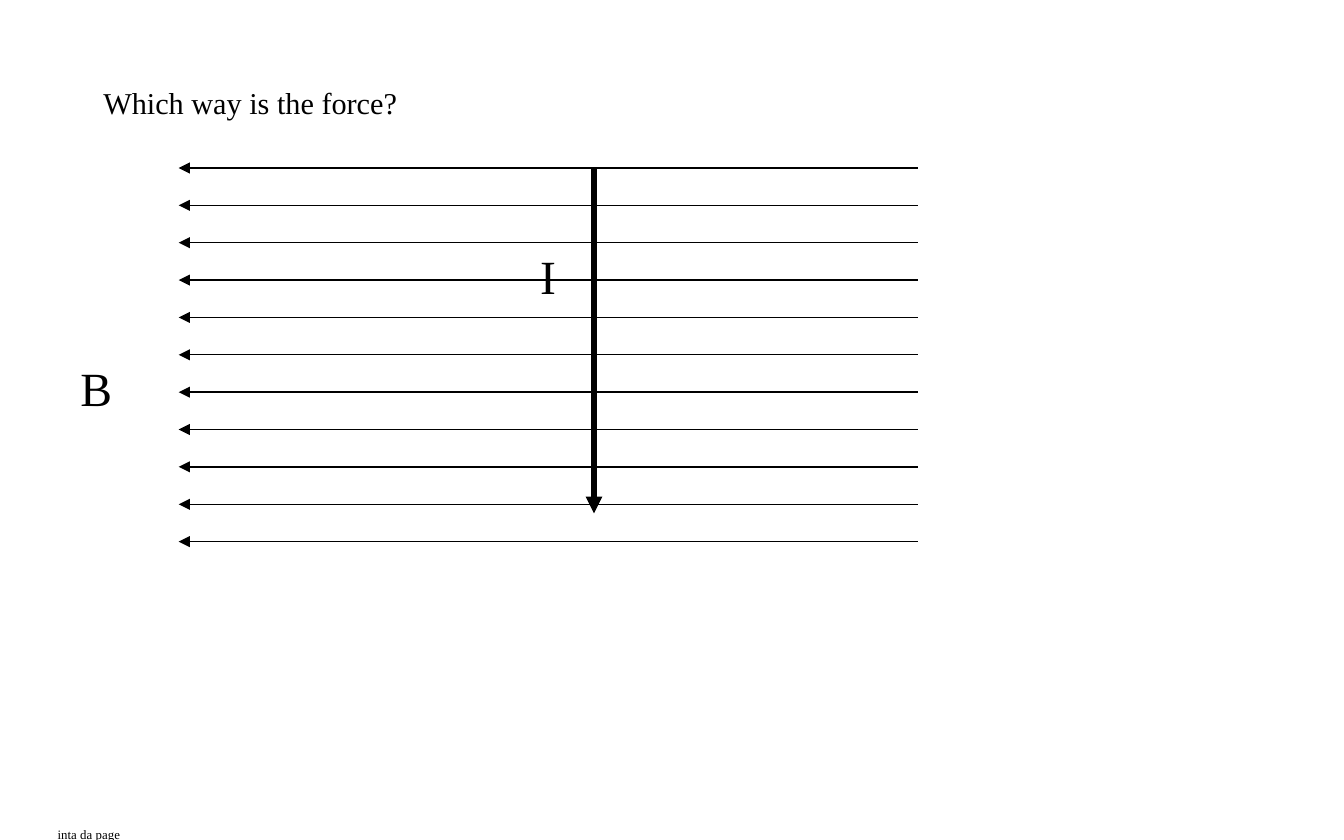
from lxml import etree
from pptx import Presentation, util as u
from pptx.dml.color import RGBColor
from pptx.enum import shapes, text
from pptx.oxml.ns import qn

BLACK = RGBColor(0, 0, 0)
FONT = "Times New Roman"
SUBSCRIPT = "-35000"
LABELS = [
    ("Which way is the force?", 28, (0.67, 0.28, 4.02, 0.57)),
    ("inta da page", 12, (0.33, 5.97, 1.01, 0.3)),
    ("I", 44, (3.92, 1.32, 0.41, 0.84)),
    ("B", 44, (0.5, 2.15, 0.61, 0.84)),
]
FIELD_LEFT, FIELD_RIGHT = 1.33, 6.83
FIELD_TOP, FIELD_BOTTOM = 1.25, 4.03
FIELD_LINES = 11
CURRENT_X, CURRENT_END = 4.42, 3.82


def add_arrow(s, x1, y1, x2, y2, width):
    c = s.shapes.add_connector(
        shapes.MSO_CONNECTOR.STRAIGHT, *(u.Inches(v) for v in (x1, y1, x2, y2)))
    c.line.color.rgb = BLACK
    c.line.width = u.Pt(width)
    etree.SubElement(c.line._get_or_add_ln(), qn("a:tailEnd"), type="triangle")
    etree.SubElement(c._element.spPr, qn("a:effectLst"))


def add_label(s, label, size, box):
    tf = s.shapes.add_textbox(*(u.Inches(v) for v in box)).text_frame
    tf.word_wrap = False
    tf.auto_size = text.MSO_AUTO_SIZE.SHAPE_TO_FIT_TEXT
    tf.text = label
    r = tf.paragraphs[0].runs[0]
    r.font.name = FONT
    r.font.size = u.Pt(size)
    r.font.color.rgb = BLACK
    r.font._element.set("baseline", SUBSCRIPT)


prs = Presentation()
prs.slide_width, prs.slide_height = u.Inches(10), u.Inches(6.25)
s = prs.slides.add_slide(prs.slide_layouts[6])

add_arrow(s, CURRENT_X, FIELD_TOP, CURRENT_X, CURRENT_END, 3)
gap = (FIELD_BOTTOM - FIELD_TOP) / (FIELD_LINES - 1)
for i in range(FIELD_LINES):
    y = FIELD_TOP + i * gap
    add_arrow(s, FIELD_RIGHT, y, FIELD_LEFT, y, 0.75)
for label in LABELS:
    add_label(s, *label)

prs.save("out.pptx")
